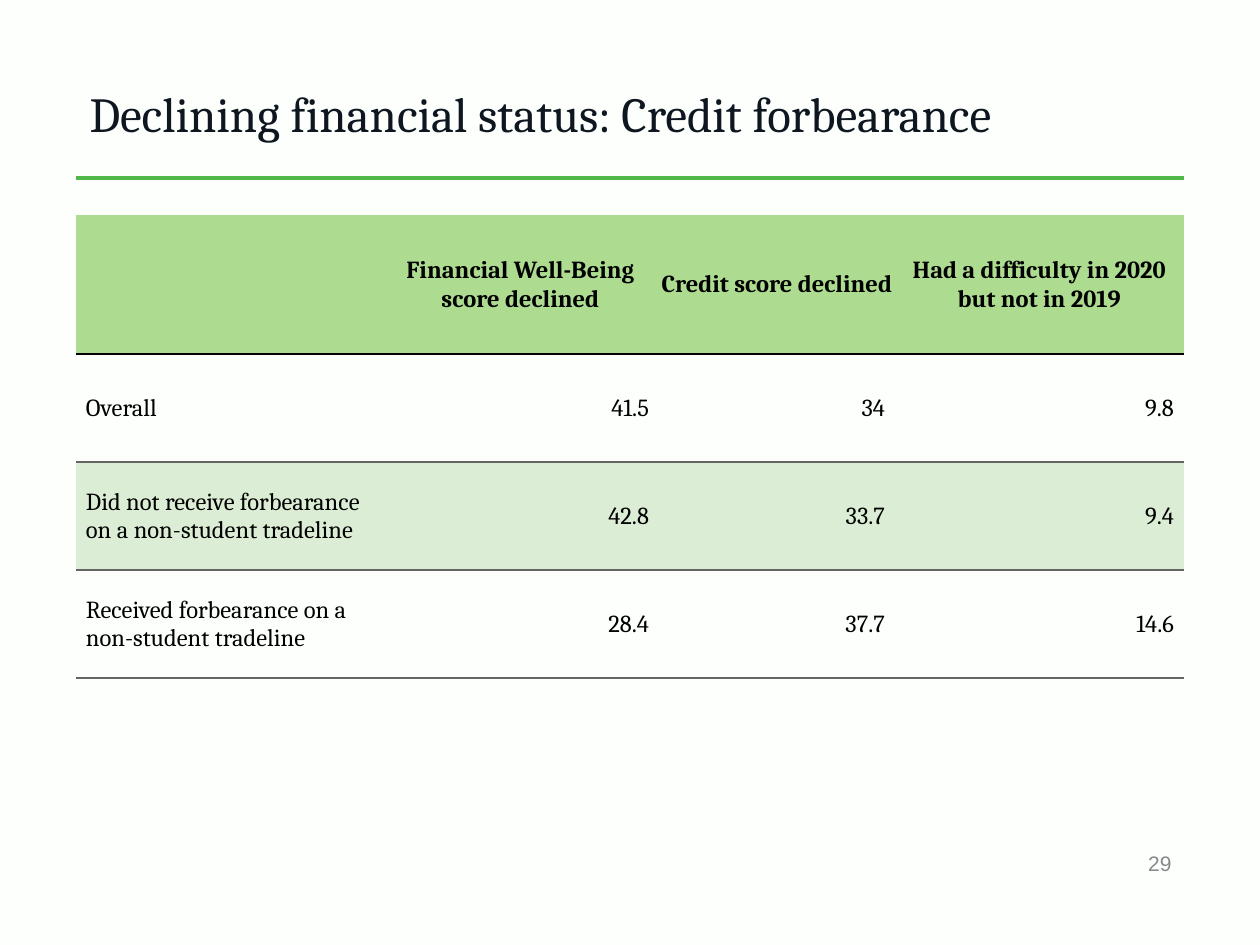
from dataclasses import dataclass

from lxml import etree
from pptx import Presentation
from pptx.dml.color import RGBColor
from pptx.enum.shapes import MSO_CONNECTOR
from pptx.enum.text import MSO_ANCHOR, MSO_AUTO_SIZE, PP_ALIGN
from pptx.oxml.ns import qn
from pptx.util import Emu, Pt

STRAIGHT = MSO_CONNECTOR.STRAIGHT
MIDDLE = MSO_ANCHOR.MIDDLE
NO_AUTOFIT = MSO_AUTO_SIZE.NONE
LEFT, CENTER, RIGHT = PP_ALIGN.LEFT, PP_ALIGN.CENTER, PP_ALIGN.RIGHT

EMU_PER_PX = 914400 / 126
TITLE_ONLY = 5
SERIF = "Cambria"
SANS = "Arial"
COLORS = {
    "background": "FDFFFD",
    "title": "0E1620",
    "rule": "50B748",
    "header": "ADDC91",
    "band": "DBEDD4",
    "text": "000000",
    "row_line": "636463",
    "page_number": "88898A",
}


@dataclass(frozen=True)
class Box:
    left: int
    top: int
    width: int
    height: int


@dataclass(frozen=True)
class TextStyle:
    font: str
    size: int
    color: str
    align: PP_ALIGN
    bold: bool = False


@dataclass(frozen=True)
class TableRow:
    texts: tuple[str, ...]
    height: int
    line: str
    fill: str | None = None
    header: bool = False


TITLE_BOX = Box(77, 62, 1107, 102)
NUMBER_BOX = Box(785, 838, 399, 50)
TABLE_BOX = Box(76, 215, 1108, 463)
RULE_Y = 178
COLUMN_WIDTHS = (306, 277, 236, 289)
ROWS = (
    TableRow(
        (
            "",
            "Financial Well-Being score declined",
            "Credit score declined",
            "Had a difficulty in 2020 but not in 2019",
        ),
        139, "text", "header", True,
    ),
    TableRow(("Overall", "41.5", "34", "9.8"), 108, "row_line"),
    TableRow(
        ("Did not receive forbearance on a non-student tradeline", "42.8", "33.7", "9.4"),
        108, "row_line", "band",
    ),
    TableRow(
        ("Received forbearance on a non-student tradeline", "28.4", "37.7", "14.6"),
        108, "row_line",
    ),
)


def px(length: int) -> Emu:
    return Emu(round(length * EMU_PER_PX))


def rgb(name: str) -> RGBColor:
    return RGBColor.from_string(COLORS[name])


def place(shape, box: Box) -> None:
    shape.left, shape.top = px(box.left), px(box.top)
    shape.width, shape.height = px(box.width), px(box.height)


def write_text(text_frame, text: str, style: TextStyle) -> None:
    text_frame.text = text
    paragraph = text_frame.paragraphs[0]
    paragraph.alignment = style.align
    font = paragraph.font
    font.name = style.font
    font.size = Pt(style.size)
    font.bold = style.bold
    font.color.rgb = rgb(style.color)


def fill_text_shape(shape, box: Box, text: str, style: TextStyle) -> None:
    place(shape, box)
    frame = shape.text_frame
    frame.word_wrap = True
    frame.auto_size = NO_AUTOFIT
    frame.vertical_anchor = MIDDLE
    write_text(frame, text, style)


def add_rule(slide) -> None:
    right = TABLE_BOX.left + TABLE_BOX.width
    rule = slide.shapes.add_connector(
        STRAIGHT, px(TABLE_BOX.left), px(RULE_Y), px(right), px(RULE_Y)
    )
    rule.line.color.rgb = rgb("rule")
    rule.line.width = Pt(2)
    etree.SubElement(rule._element.spPr, qn("a:effectLst"))


def set_borders(cell, top: str | None, bottom: str) -> None:
    properties = cell._tc.get_or_add_tcPr()
    for tag, color in (("lnL", None), ("lnR", None), ("lnT", top), ("lnB", bottom)):
        line = etree.SubElement(properties, qn(f"a:{tag}"), w=str(Pt(1)))
        if color is None:
            etree.SubElement(line, qn("a:noFill"))
        else:
            fill = etree.SubElement(line, qn("a:solidFill"))
            etree.SubElement(fill, qn("a:srgbClr"), val=COLORS[color])


def format_cell(cell, text: str, row: TableRow, column: int, top: str | None) -> None:
    if row.header:
        align = CENTER
    else:
        align = RIGHT if column else LEFT
    cell.margin_left = px(10 if align == LEFT else 1)
    cell.margin_right = px(10 if align == RIGHT else 1)
    cell.margin_top, cell.margin_bottom = px(1), px(0)
    cell.vertical_anchor = MIDDLE
    write_text(cell.text_frame, text, TextStyle(SERIF, 14, "text", align, row.header))
    set_borders(cell, top, row.line)
    if row.fill is None:
        cell.fill.background()
    else:
        cell.fill.solid()
        cell.fill.fore_color.rgb = rgb(row.fill)


def add_score_table(slide) -> None:
    box = TABLE_BOX
    table = slide.shapes.add_table(
        len(ROWS), len(COLUMN_WIDTHS),
        px(box.left), px(box.top), px(box.width), px(box.height),
    ).table
    table.first_row = False
    table.horz_banding = False
    for column, width in zip(table.columns, COLUMN_WIDTHS):
        column.width = px(width)
    top = None
    for row_index, row in enumerate(ROWS):
        table.rows[row_index].height = px(row.height)
        for column_index, text in enumerate(row.texts):
            format_cell(table.cell(row_index, column_index), text, row, column_index, top)
        top = row.line


def main() -> None:
    presentation = Presentation()
    presentation.slide_width, presentation.slide_height = px(1260), px(945)
    slide = presentation.slides.add_slide(presentation.slide_layouts[TITLE_ONLY])
    slide.background.fill.solid()
    slide.background.fill.fore_color.rgb = rgb("background")

    add_rule(slide)
    fill_text_shape(
        slide.shapes.title, TITLE_BOX, "Declining financial status: Credit forbearance",
        TextStyle(SERIF, 28, "title", LEFT),
    )
    number = slide.shapes.add_textbox(0, 0, 0, 0)
    fill_text_shape(number, NUMBER_BOX, "29", TextStyle(SANS, 12, "page_number", RIGHT))
    add_score_table(slide)
    presentation.save("out.pptx")


if __name__ == "__main__":
    main()
